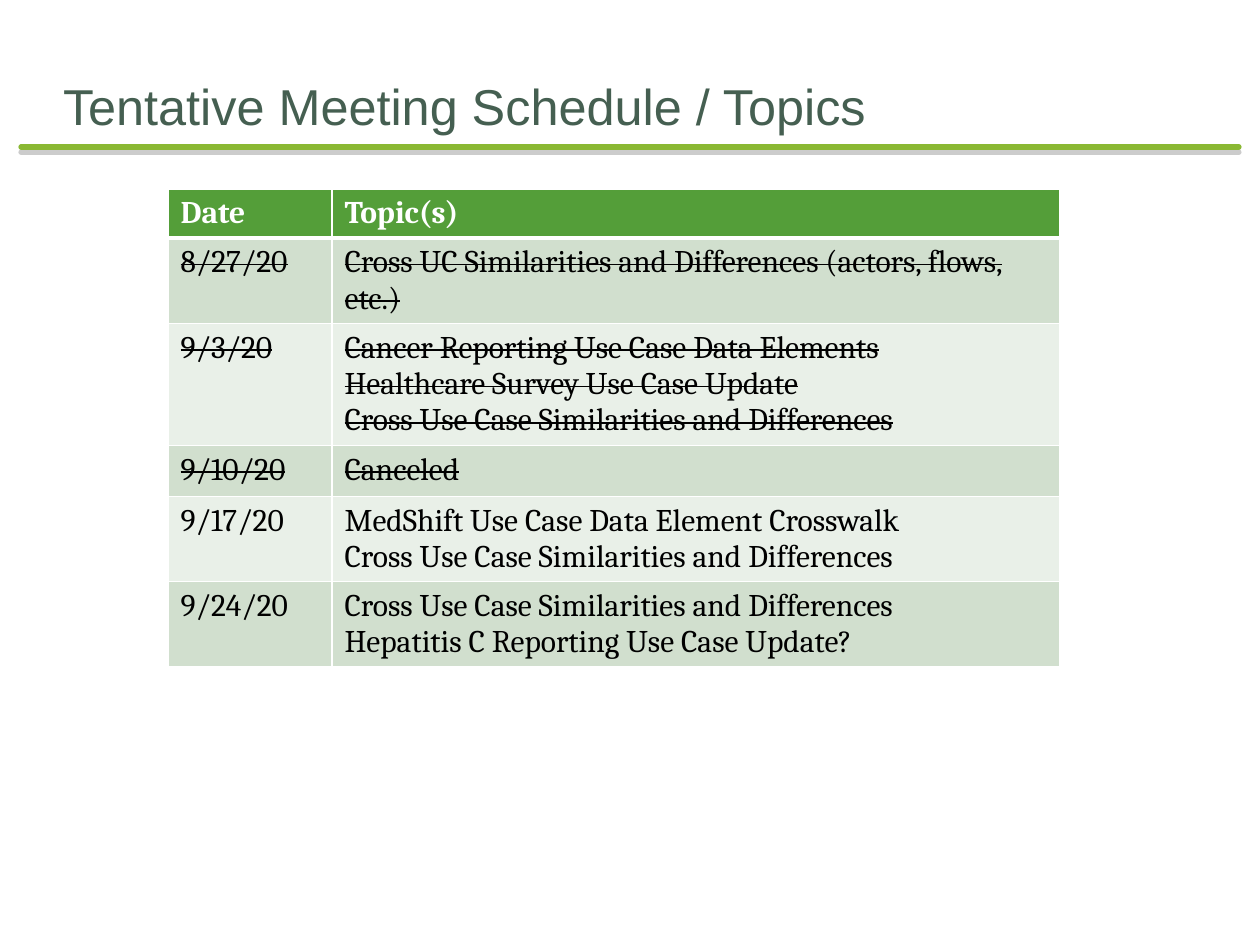
from dataclasses import dataclass

from lxml.etree import SubElement
from pptx import Presentation
from pptx.dml.color import RGBColor
from pptx.enum.shapes import MSO_CONNECTOR as Connector
from pptx.enum.text import MSO_ANCHOR as Anchor, MSO_AUTO_SIZE as AutoSize, PP_ALIGN as Align
from pptx.oxml.ns import qn
from pptx.util import Emu, Pt

PX_PER_INCH = 126
TITLE_ONLY = 5
WHITE, BLACK = "FFFFFF", "000000"
TITLE_GREEN, RULE_GREEN, HEADER_GREEN = "455F51", "8AB833", "549E39"
BANDS = ("D1DFCE", "E9F0E8")


@dataclass(frozen=True)
class Meeting:
    date: str
    topics: tuple[str, ...]
    height: int
    struck: bool = False


MEETINGS = (
    Meeting("8/27/20", ("Cross UC Similarities and Differences (actors, flows, etc.)",), 85, True),
    Meeting("9/3/20", ("Cancer Reporting Use Case Data Elements",
                       "Healthcare Survey Use Case Update",
                       "Cross Use Case Similarities and Differences"), 122, True),
    Meeting("9/10/20", ("Canceled",), 51, True),
    Meeting("9/17/20", ("MedShift Use Case Data Element Crosswalk",
                        "Cross Use Case Similarities and Differences"), 85),
    Meeting("9/24/20", ("Cross Use Case Similarities and Differences",
                        "Hepatitis C Reporting Use Case Update?"), 85),
)
HEADER_HEIGHT = 48
COLUMN_WIDTHS = (164, 728)


def px(length: int) -> Emu:
    return Emu(round(length * 914400 / PX_PER_INCH))


def color(hex_code: str) -> RGBColor:
    return RGBColor.from_string(hex_code)


def write(frame, lines: tuple[str, ...], *, font: str = "Cambria", size: float = 18,
          ink: str = BLACK, bold: bool = False, struck: bool = False) -> None:
    """Put one paragraph per line into the text frame."""
    for index, line in enumerate(lines):
        paragraph = frame.paragraphs[0] if index == 0 else frame.add_paragraph()
        paragraph.alignment = Align.LEFT
        run = paragraph.add_run()
        run.text = line
        run.font.name, run.font.size, run.font.bold = font, Pt(size), bold
        run.font.color.rgb = color(ink)
        if struck:
            run._r.get_or_add_rPr().set("strike", "sngStrike")


def add_title(slide, text: str) -> None:
    title = slide.shapes.title
    title.left, title.top, title.width, title.height = px(63), px(63), px(1134), px(73)
    frame = title.text_frame
    frame.word_wrap, frame.auto_size = True, AutoSize.NONE
    frame.vertical_anchor = Anchor.BOTTOM
    frame.margin_left = frame.margin_right = frame.margin_bottom = 0
    frame.margin_top = Pt(3.6)
    write(frame, (text,), font="Arial", size=28.8, ink=TITLE_GREEN)


def add_title_rule(slide) -> None:
    """Draw the round-capped rule with a hard grey shadow under it."""
    rule = slide.shapes.add_connector(Connector.STRAIGHT, px(21), px(147), px(1239), px(147))
    rule.line.color.rgb = color(RULE_GREEN)
    rule.line.width = Pt(3)
    rule.line._get_or_add_ln().set("cap", "rnd")
    effects = SubElement(rule._element.spPr, qn("a:effectLst"))
    shadow = SubElement(effects, qn("a:outerShdw"), blurRad="0", dist=str(Pt(3)),
                        dir="5400000", rotWithShape="0")
    tint = SubElement(shadow, qn("a:srgbClr"), val="808080")
    SubElement(tint, qn("a:alpha"), val="40000")


def style_cell(cell, fill: str, *, top: float = 1, bottom: float = 1) -> None:
    """Set white borders, with widths in points, and then the fill."""
    properties = cell._tc.get_or_add_tcPr()
    for side, width in (("L", 1), ("R", 1), ("T", top), ("B", bottom)):
        border = SubElement(properties, qn(f"a:ln{side}"), w=str(Pt(width)))
        SubElement(SubElement(border, qn("a:solidFill")), qn("a:srgbClr"), val=WHITE)
    cell.fill.solid()
    cell.fill.fore_color.rgb = color(fill)


def add_schedule(slide) -> None:
    heights = (HEADER_HEIGHT, *(meeting.height for meeting in MEETINGS))
    table = slide.shapes.add_table(len(heights), len(COLUMN_WIDTHS), px(168), px(189),
                                   px(sum(COLUMN_WIDTHS)), px(sum(heights))).table
    for column, width in zip(table.columns, COLUMN_WIDTHS):
        column.width = px(width)
    for row, height in zip(table.rows, heights):
        row.height = px(height)

    for column, heading in enumerate(("Date", "Topic(s)")):
        cell = table.cell(0, column)
        style_cell(cell, HEADER_GREEN, bottom=3)
        write(cell.text_frame, (heading,), ink=WHITE, bold=True)

    for row, meeting in enumerate(MEETINGS, start=1):
        for column, lines in enumerate(((meeting.date,), meeting.topics)):
            cell = table.cell(row, column)
            style_cell(cell, BANDS[(row - 1) % 2], top=3 if row == 1 else 1)
            write(cell.text_frame, lines, struck=meeting.struck)


def main() -> None:
    deck = Presentation()
    deck.slide_width, deck.slide_height = px(1260), px(945)
    slide = deck.slides.add_slide(deck.slide_layouts[TITLE_ONLY])
    add_title_rule(slide)
    add_title(slide, "Tentative Meeting Schedule / Topics")
    add_schedule(slide)
    deck.save("out.pptx")


if __name__ == "__main__":
    main()
